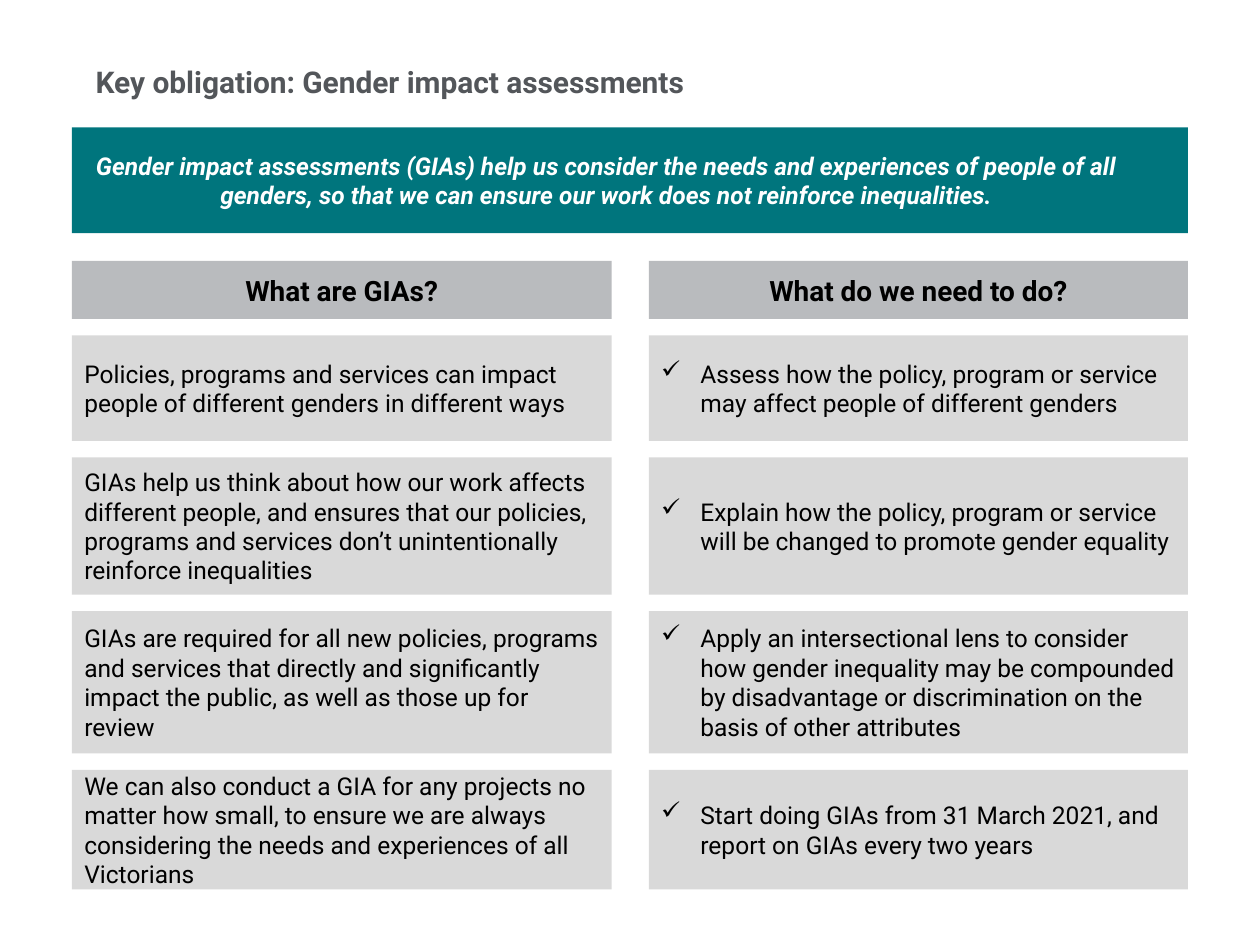
import pptx
import pptx.util
import pptx.dml.color
import pptx.enum.shapes
import pptx.enum.text
import pptx.oxml.ns
import lxml.etree

Cm, Pt = pptx.util.Cm, pptx.util.Pt
ALIGN = pptx.enum.text.PP_ALIGN
ANCHOR = pptx.enum.text.MSO_ANCHOR
HUES = {
    "title": "53565A",
    "teal": "00757D",
    "head": "B9BBBE",
    "card": "D9D9D9",
    "ink": "000000",
    "white": "FFFFFF",
}
GAP = 0.33
HEAD = 1.17
ROWS = (2.13, 2.77, 2.87, 2.41)
FACTS = (
    "Policies, programs and services can impact people of different genders in different ways",
    "GIAs help us think about how our work affects different people, and ensures that our "
    "policies, programs and services don’t unintentionally reinforce inequalities",
    "GIAs are required for all new policies, programs and services that directly and "
    "significantly impact the public, as well as those up for review",
    "We can also conduct a GIA for any projects no matter how small, to ensure we are always "
    "considering the needs and experiences of all Victorians",
)
TASKS = (
    "Assess how the policy, program or service may affect people of different genders",
    "Explain how the policy, program or service will be changed to promote gender equality",
    "Apply an intersectional lens to consider how gender inequality may be compounded by "
    "disadvantage or discrimination on the basis of other attributes",
    "Start doing GIAs from 31 March 2021, and report on GIAs every two years",
)


def hue(name):
    return pptx.dml.color.RGBColor.from_string(HUES[name])


def write(shape, text, size=14, color="ink", bold=False, italic=False, align=ALIGN.LEFT,
          anchor=ANCHOR.MIDDLE, inset=(0.25, 0.13, 0.25, 0.13), after=0, tick=False):
    """Fill a shape with one paragraph; inset is left, top, right, bottom in cm."""
    frame = shape.text_frame
    frame.word_wrap = True
    frame.vertical_anchor = anchor
    (frame.margin_left, frame.margin_top,
     frame.margin_right, frame.margin_bottom) = map(Cm, inset)
    para = frame.paragraphs[0]
    para.alignment = align
    para.space_after = Pt(after)
    run = para.add_run()
    run.text = text
    font = run.font
    font.name, font.size, font.bold, font.italic = "Roboto", Pt(size), bold, italic
    font.color.rgb = hue(color)
    if tick:
        props = para._p.get_or_add_pPr()
        props.set("marL", str(Cm(0.79)))
        props.set("indent", str(-Cm(0.79)))
        mark = lxml.etree.SubElement(props, pptx.oxml.ns.qn("a:buChar"))
        mark.set("char", "✓")


def panel(slide, box, fill):
    shape = slide.shapes.add_shape(
        pptx.enum.shapes.MSO_SHAPE.RECTANGLE, *map(Cm, box))
    shape.shadow.inherit = False
    shape.fill.solid()
    shape.fill.fore_color.rgb = hue(fill)
    shape.line.fill.background()
    return shape


def title(slide, box):
    write(slide.shapes.add_textbox(*map(Cm, box)),
          "Key obligation: Gender impact assessments", size=17.1, color="title",
          bold=True, anchor=ANCHOR.BOTTOM, inset=(0, 0, 0, 0))


def banner(slide, box):
    write(panel(slide, box, "teal"),
          "Gender impact assessments (GIAs) help us consider the needs and experiences of "
          "people of all genders, so that we can ensure our work does not reinforce "
          "inequalities.",
          color="white", bold=True, italic=True, align=ALIGN.CENTER,
          inset=(0.05, 0.13, 0.99, 0.13))


def column(slide, left, top, width, head, cards, tick=False):
    """Stack a heading and its cards with equal gaps."""
    write(panel(slide, (left, top, width, HEAD), "head"), head,
          size=16, bold=True, align=ALIGN.CENTER, after=6)
    top += HEAD + GAP
    for text, height in zip(cards, ROWS):
        write(panel(slide, (left, top, width, height), "card"), text, tick=tick)
        top += height + GAP


def main():
    deck = pptx.Presentation()
    deck.slide_width, deck.slide_height = Cm(25.4), Cm(19.05)
    slide = deck.slides.add_slide(deck.slide_layouts[6])
    title(slide, (1.93, 0, 17.09, 2.01))
    banner(slide, (1.45, 2.57, 22.5, 2.13))
    column(slide, 1.45, 5.26, 10.88, "What are GIAs?", FACTS)
    column(slide, 13.08, 5.26, 10.87, "What do we need to do?", TASKS, tick=True)
    deck.save("out.pptx")


if __name__ == "__main__":
    main()
